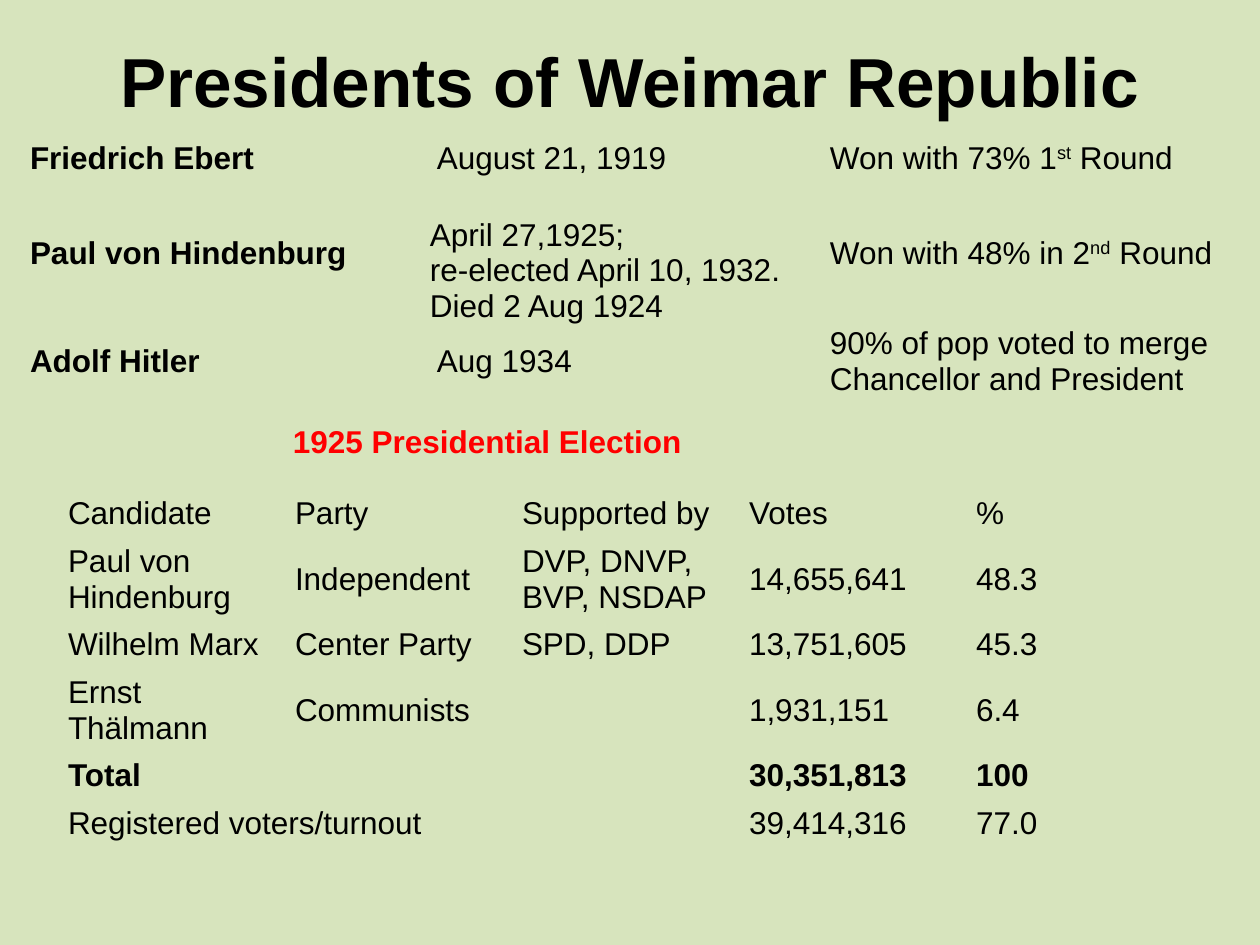
"""Build the slide on the presidents of the Weimar Republic."""
from dataclasses import dataclass

import pptx
import pptx.dml.color
import pptx.enum.text
import pptx.oxml.ns
import pptx.util

EMU_PER_PX = 914400 / 126
NO_GRID_STYLE = "{2D5ABB26-0587-4C30-8999-92F81FD0307C}"
ALIGN = pptx.enum.text.PP_ALIGN
MIDDLE = pptx.enum.text.MSO_ANCHOR.MIDDLE


@dataclass(frozen=True)
class Theme:
    font: str = "Arial"
    background: str = "D7E4BD"
    ink: str = "000000"
    accent: str = "FF0000"
    title_size: float = 39.6
    body_size: float = 18


@dataclass(frozen=True)
class Label:
    text: str
    left: int
    top: int
    width: int
    height: int
    size: float
    color: str
    align: ALIGN
    inset_x: int
    inset_y: int


@dataclass(frozen=True)
class Grid:
    left: int
    top: int
    column_width: int
    row_heights: tuple[int, ...]
    rows: tuple[tuple[str, ...], ...]
    inset_x: int
    inset_y: int
    bold_cells: frozenset[tuple[int, int]]
    merges: tuple[tuple[int, int], ...] = ()
    extra_top: tuple[tuple[int, int, int], ...] = ()


THEME = Theme()

LABELS = (
    Label("Presidents of Weimar Republic", 63, 38, 1134, 157,
          THEME.title_size, THEME.ink, ALIGN.CENTER, 13, 0),
    Label("1925 Presidential Election", 280, 416, 640, 50,
          THEME.body_size, THEME.accent, ALIGN.LEFT, 13, 6),
)

PRESIDENTS = Grid(
    29, 135, 400, (47, 143, 73),
    (
        ("Friedrich Ebert", " August 21, 1919", "Won with 73% 1^st^ Round"),
        ("Paul von Hindenburg",
         "April 27,1925;\nre-elected April 10, 1932. Died 2 Aug 1924",
         "Won with 48% in 2^nd^ Round"),
        ("Adolf Hitler", " Aug 1934",
         "90% of pop voted to merge Chancellor and President"),
    ),
    1, 1, frozenset((row, 0) for row in range(3)), extra_top=((1, 1, 35),),
)

ELECTION = Grid(
    55, 490, 227, (48, 83, 48, 83, 48, 48, 48),
    (
        ("Candidate", "Party", "Supported by", "Votes", "%"),
        ("Paul von Hindenburg", "Independent", "DVP, DNVP, BVP, NSDAP",
         "14,655,641", "48.3"),
        ("Wilhelm Marx", "Center Party", "SPD, DDP", "13,751,605", "45.3"),
        ("Ernst Thälmann", "Communists", "", "1,931,151", "6.4"),
        ("Total", "", "", "30,351,813", "100"),
        ("Registered voters/turnout", "", "", "39,414,316", "77.0"),
        ("", "", "", "", ""),
    ),
    13, 6, frozenset((4, column) for column in range(5)),
    merges=((4, 3), (5, 3), (6, 5)),
)


def px(length: int) -> int:
    """Turn pixels into EMU."""
    return round(length * EMU_PER_PX)


def apply_format(target: object, values: dict[str, object]) -> None:
    """Set each named attribute on the target."""
    for name, value in values.items():
        setattr(target, name, value)


def insets(x: int, y: int) -> dict[str, object]:
    """Give the four margins of a text box or cell."""
    return {"margin_left": px(x), "margin_right": px(x),
            "margin_top": px(y), "margin_bottom": px(y)}


def write_text(frame, text: str, size: float, color: str, bold: bool,
               align: ALIGN = ALIGN.LEFT) -> None:
    """Write one paragraph per line, raising the parts between carets."""
    for index, line in enumerate(text.split("\n")):
        para = frame.add_paragraph() if index else frame.paragraphs[0]
        para.alignment = align
        for position, piece in enumerate(line.split("^")):
            span = para.add_run()
            span.text = piece
            apply_format(span.font, {"name": THEME.font, "bold": bold,
                                     "size": pptx.util.Pt(size)})
            span.font.color.rgb = pptx.dml.color.RGBColor.from_string(color)
            if position % 2:
                span._r.get_or_add_rPr().set("baseline", "30000")


def draw_label(page, label: Label) -> None:
    """Draw a bold line of text in its own box."""
    box = page.shapes.add_textbox(px(label.left), px(label.top),
                                  px(label.width), px(label.height))
    frame = box.text_frame
    apply_format(frame, {"word_wrap": True,
                         **insets(label.inset_x, label.inset_y)})
    write_text(frame, label.text, label.size, label.color, True, label.align)


def draw_grid(page, grid: Grid) -> None:
    """Draw a plain table without lines or fills."""
    columns = len(grid.rows[0])
    table = page.shapes.add_table(
        len(grid.rows), columns, px(grid.left), px(grid.top),
        px(grid.column_width * columns), px(sum(grid.row_heights))).table
    apply_format(table, {"first_row": False, "horz_banding": False})
    style = table._tbl.tblPr.find(pptx.oxml.ns.qn("a:tableStyleId"))
    style.text = NO_GRID_STYLE
    for column in table.columns:
        column.width = px(grid.column_width)
    for row, height in zip(table.rows, grid.row_heights):
        row.height = px(height)
    for row, count in grid.merges:
        table.cell(row, 0).merge(table.cell(row, count - 1))
    for row, texts in enumerate(grid.rows):
        for column, text in enumerate(texts):
            cell = table.cell(row, column)
            cell.fill.background()
            apply_format(cell, {"vertical_anchor": MIDDLE,
                                **insets(grid.inset_x, grid.inset_y)})
            if text:
                write_text(cell.text_frame, text, THEME.body_size, THEME.ink,
                           (row, column) in grid.bold_cells)
    for row, column, extra in grid.extra_top:
        table.cell(row, column).margin_top = px(grid.inset_y + extra)


def main() -> None:
    """Build and save the deck."""
    deck = pptx.Presentation()
    apply_format(deck, {"slide_width": px(1260), "slide_height": px(945)})
    page = deck.slides.add_slide(deck.slide_layouts[6])
    fill = page.background.fill
    fill.solid()
    fill.fore_color.rgb = pptx.dml.color.RGBColor.from_string(THEME.background)
    for grid in (PRESIDENTS, ELECTION):
        draw_grid(page, grid)
    for label in LABELS:
        draw_label(page, label)
    deck.save("out.pptx")


if __name__ == "__main__":
    main()
